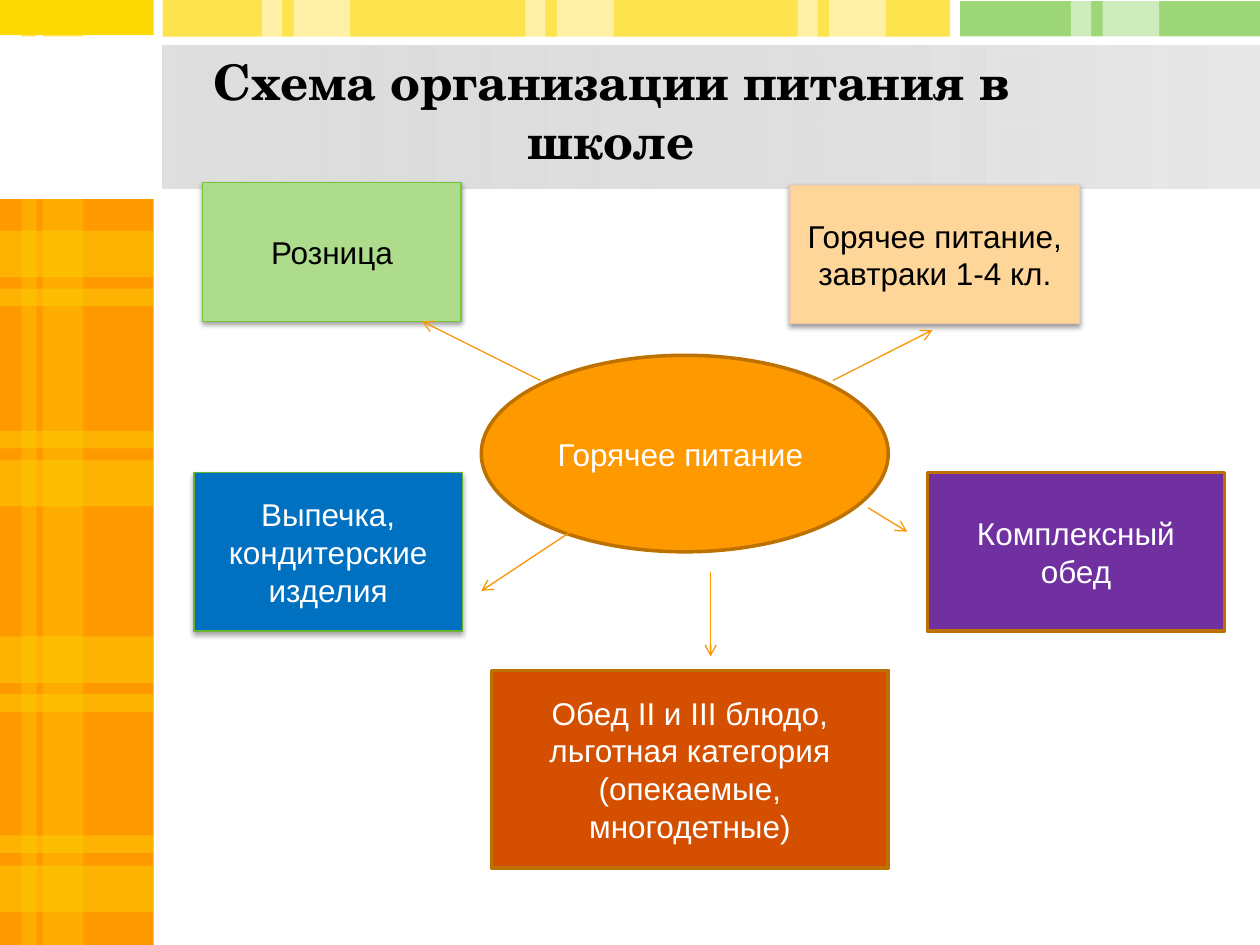
"""Build a slide with a diagram of how school meals are organised."""
from pptx import Presentation
from pptx.dml.color import RGBColor
from pptx.enum.shapes import MSO_CONNECTOR, MSO_SHAPE
from pptx.enum.text import MSO_ANCHOR, PP_ALIGN
from pptx.oxml import parse_xml
from pptx.oxml.ns import nsdecls, qn
from pptx.util import Inches, Pt
from lxml import etree

RECTANGLE, OVAL = MSO_SHAPE.RECTANGLE, MSO_SHAPE.OVAL
STRAIGHT = MSO_CONNECTOR.STRAIGHT
CENTER = PP_ALIGN.CENTER
TOP, MIDDLE = MSO_ANCHOR.TOP, MSO_ANCHOR.MIDDLE

WHITE = RGBColor(0xFF, 0xFF, 0xFF)
BLACK = RGBColor(0x00, 0x00, 0x00)
ORANGE = RGBColor(0xFF, 0x99, 0x00)
YELLOW = RGBColor(0xFD, 0xD9, 0x03)
GREEN = RGBColor(0x76, 0xC7, 0x3F)
GRAY = RGBColor(0xC0, 0xC0, 0xC0)
PALE_GRAY = RGBColor(0xE8, 0xE8, 0xE8)
BROWN = RGBColor(0xBD, 0x71, 0x00)
ARROW = RGBColor(0xF9, 0x96, 0x00)
LIGHT_GREEN = RGBColor(0xAD, 0xDD, 0x8C)
GREEN_EDGE = RGBColor(0x73, 0xC6, 0x3A)
PEACH = RGBColor(0xFF, 0xD6, 0x99)
PEACH_EDGE = RGBColor(0xFB, 0xC5, 0xA4)
RUST = RGBColor(0xD4, 0x50, 0x00)
BLUE = RGBColor(0x00, 0x70, 0xC0)
BLUE_EDGE = RGBColor(0x67, 0xB3, 0x34)
PURPLE = RGBColor(0x70, 0x30, 0xA0)

WIDTH, HEIGHT = 10, 7.5
SIDE_WIDTH, SIDE_TOP = 1.22, 1.58
MAIN_LEFT = 1.29
TITLE = "Схема организации питания в школе"
TITLE_BOX = (1.3, 0.36, 7.1, 1.04)
TITLE_BAND = (MAIN_LEFT, 0.36, WIDTH - MAIN_LEFT, 1.14)

STRIPS = [
    ((0, SIDE_TOP, SIDE_WIDTH, HEIGHT - SIDE_TOP), ORANGE, 100),
    ((0, 0, SIDE_WIDTH, 0.28), YELLOW, 100),
    ((MAIN_LEFT, 0, 6.25, 0.29), YELLOW, 70),
    ((7.62, 0.01, 2.38, 0.28), GREEN, 70),
]
WIDE_BANDS = [1.83, 3.65, 5.05, 6.87]
NARROW_BANDS = [2.29, 3.42, 5.51, 6.63]
SIDE_COLUMNS = [(0.17, 0.12), (0.34, 0.32)]
TOP_PAIRS = [2.08, 4.17, 6.33, 8.5]
PAIR_PARTS = [(0, 0.16), (0.25, 0.45)]

NODES = [
    ("Горячее питание ", OVAL, (3.82, 2.82, 3.23, 1.56), ORANGE, BROWN, 2, WHITE, None),
    ("Розница", RECTANGLE, (1.61, 1.45, 2.05, 1.1), LIGHT_GREEN, GREEN_EDGE, 0.75, BLACK, (38, 1.6)),
    ("Горячее питание, завтраки 1-4 кл.", RECTANGLE, (6.27, 1.47, 2.3, 1.1),
     PEACH, PEACH_EDGE, 0.75, BLACK, (38, 1.6)),
    ("Обед II и III блюдо, льготная категория (опекаемые, многодетные)", RECTANGLE,
     (3.9, 5.32, 3.15, 1.57), RUST, BROWN, 2, WHITE, None),
    ("Выпечка, кондитерские изделия", RECTANGLE, (1.54, 3.75, 2.13, 1.26),
     BLUE, BLUE_EDGE, 0.75, WHITE, (35, 1.8)),
    ("Комплексный обед", RECTANGLE, (7.36, 3.75, 2.36, 1.26), PURPLE, BROWN, 2, WHITE, None),
]
ARROWS = [
    (4.53, 4.22, 3.82, 4.69),
    (5.64, 4.54, 5.64, 5.21),
    (6.89, 4.03, 7.2, 4.22),
    (6.61, 3.02, 7.4, 2.62),
    (4.29, 3.02, 3.35, 2.55),
]


def set_alpha(color_element, percent):
    etree.SubElement(color_element, qn("a:alpha"), val=str(percent * 1000))


def add_block(slide, kind, box, color=None, opacity=100):
    shape = slide.shapes.add_shape(kind, *map(Inches, box))
    shape.shadow.inherit = False
    shape.line.fill.background()
    if color is not None:
        shape.fill.solid()
        shape.fill.fore_color.rgb = color
        if opacity < 100:
            set_alpha(shape._element.spPr.find(".//" + qn("a:srgbClr")), opacity)
    return shape


def write(shape, text, font_name, size, color, anchor, bold=False):
    frame = shape.text_frame
    frame.word_wrap = True
    frame.vertical_anchor = anchor
    paragraph = frame.paragraphs[0]
    paragraph.alignment = CENTER
    run = paragraph.add_run()
    run.text = text
    run.font.name = font_name
    run.font.size = Pt(size)
    run.font.bold = bold
    run.font.color.rgb = color


def add_title_band(slide):
    band = add_block(slide, RECTANGLE, TITLE_BAND)
    band.fill.gradient()
    band.fill.gradient_angle = 0
    for stop, color in zip(band.fill.gradient_stops, (GRAY, PALE_GRAY)):
        stop.color.rgb = color
    set_alpha(band._element.spPr.find(".//" + qn("a:srgbClr")), 50)


def add_decoration(slide):
    for box, color, opacity in STRIPS:
        add_block(slide, RECTANGLE, box, color, opacity)
    for tops, height in ((WIDE_BANDS, 0.37), (NARROW_BANDS, 0.14)):
        for top in tops:
            add_block(slide, RECTANGLE, (0, top, SIDE_WIDTH, height), YELLOW, 40)
    for left, width in SIDE_COLUMNS:
        add_block(slide, RECTANGLE, (left, SIDE_TOP, width, HEIGHT - SIDE_TOP), YELLOW, 30)
        add_block(slide, RECTANGLE, (left, 0, width, 0.29), YELLOW, 50)
    for pair_left in TOP_PAIRS:
        for offset, width in PAIR_PARTS:
            add_block(slide, RECTANGLE, (pair_left + offset, 0, width, 0.31), WHITE, 50)
    add_title_band(slide)


def add_shadow(shape, opacity, distance):
    effects = shape._element.spPr.find(qn("a:effectLst"))
    effects.append(parse_xml(
        f'<a:outerShdw {nsdecls("a")} blurRad="{Pt(3.1)}" dist="{Pt(distance)}" dir="5400000" '
        f'rotWithShape="0"><a:srgbClr val="{BLACK}"><a:alpha val="{opacity * 1000}"/>'
        '</a:srgbClr></a:outerShdw>'))


def add_node(slide, text, kind, box, fill, edge, edge_width, text_color, shadow):
    shape = add_block(slide, kind, box, fill)
    shape.line.color.rgb = edge
    shape.line.width = Pt(edge_width)
    if shadow:
        add_shadow(shape, *shadow)
    write(shape, text, "Arial", 18, text_color, MIDDLE)


def add_arrow(slide, ends):
    connector = slide.shapes.add_connector(STRAIGHT, *map(Inches, ends))
    connector.line.color.rgb = ARROW
    connector.line.width = Pt(0.75)
    properties = connector._element.spPr
    etree.SubElement(properties.find(qn("a:ln")), qn("a:tailEnd"), type="arrow")
    etree.SubElement(properties, qn("a:effectLst"))


def add_title(slide):
    title = slide.shapes.title
    title.left, title.top, title.width, title.height = map(Inches, TITLE_BOX)
    write(title, TITLE, "TeX Gyre Schola", 28, BLACK, TOP, bold=True)
    slide.shapes._spTree.append(title._element)


def main():
    presentation = Presentation()
    presentation.slide_width, presentation.slide_height = Inches(WIDTH), Inches(HEIGHT)
    slide = presentation.slides.add_slide(presentation.slide_layouts[5])
    add_decoration(slide)
    for node in NODES:
        add_node(slide, *node)
    for ends in ARROWS:
        add_arrow(slide, ends)
    add_title(slide)
    presentation.save("out.pptx")


if __name__ == "__main__":
    main()
